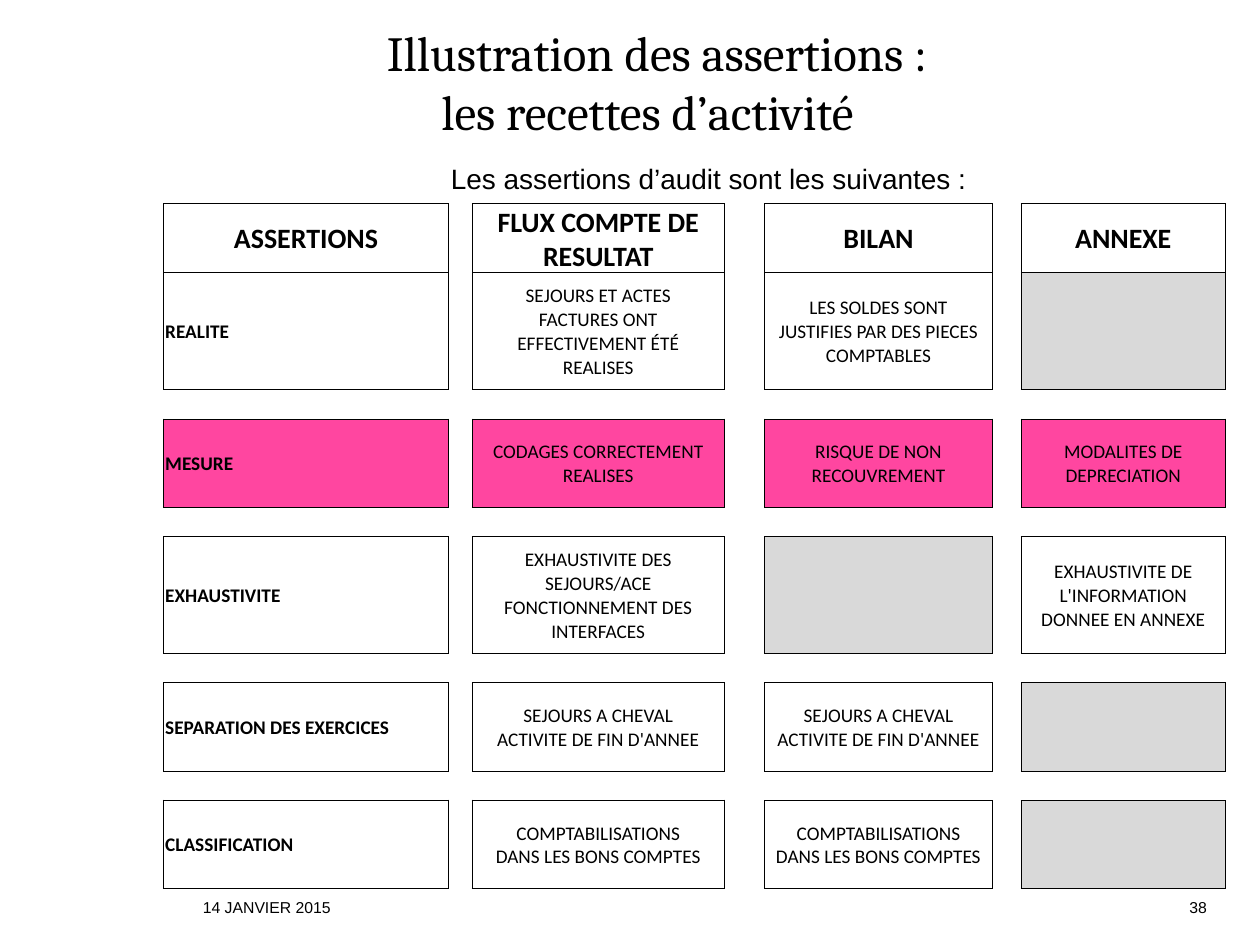
from pptx import Presentation
from pptx import util as u
from pptx.dml.color import RGBColor
from pptx.enum import text
from pptx.oxml import parse_xml
from pptx.oxml.ns import nsdecls

COLORS = {"ink": "000000", "paper": "FFFFFF", "empty": "D9D9D9", "focus": "FF46A0"}
ALIGN = text.PP_ALIGN
ANCHOR = text.MSO_ANCHOR


def format_paragraph(p, content, fmt, align=ALIGN.LEFT, indent=0):
    p.text = content
    p.alignment = align
    if indent:
        p._p.get_or_add_pPr().set("marL", str(u.Cm(indent)))
    p.font.color.rgb = RGBColor.from_string(COLORS["ink"])
    for key, value in fmt.items():
        setattr(p.font, key, value)


def line_weight(row, col):
    """Outline in points of a filled-in cell; 0 for spacers and outside the grid."""
    if row not in (0, 1, 3, 5, 7, 9) or col not in (0, 2, 4, 6):
        return 0
    return 1 if row == 9 and col < 4 else 0.5


prs = Presentation()
prs.slide_width, prs.slide_height = u.Cm(25.4), u.Cm(19.05)
s = prs.slides.add_slide(prs.slide_layouts[6])

# Title, introduction and footer: box, anchor, alignment, font, (line, indent) pairs
title_font = {"name": "Cambria", "size": u.Pt(28)}
intro_font = {"name": "Arial", "size": u.Pt(16)}
footer_font = {"name": "Arial", "size": u.Pt(9)}
boxes = [
    ((3, 0, 20.96, 2.82), ANCHOR.BOTTOM, ALIGN.LEFT, title_font,
     [("Illustration des assertions :", 4.8), ("les recettes d’activité", 5.9)]),
    ((4.09, 3.12, 19.84, 12.67), ANCHOR.TOP, ALIGN.LEFT, intro_font,
     [("Les assertions d’audit sont les suivantes :", 5)]),
    ((4.09, 17.96, 18, 0.51), ANCHOR.BOTTOM, ALIGN.LEFT, footer_font,
     [("14 JANVIER 2015", 0)]),
    ((22.3, 17.96, 2.03, 0.51), ANCHOR.BOTTOM, ALIGN.RIGHT, footer_font,
     [("38", 0)]),
]
for box, anchor, align, fmt, lines in boxes:
    tf = s.shapes.add_textbox(*map(u.Cm, box)).text_frame
    frame_format = {"word_wrap": True, "vertical_anchor": anchor, "margin_left": 0,
                    "margin_right": 0, "margin_top": 0, "margin_bottom": 0}
    for key, value in frame_format.items():
        setattr(tf, key, value)
    for i, (line, indent) in enumerate(lines):
        p = tf.add_paragraph() if i else tf.paragraphs[0]
        format_paragraph(p, line, fmt, align, indent)
        if fmt is intro_font:
            p.line_spacing = 1.2

# Assertions table: None marks a greyed cell
entries = [
    ["ASSERTIONS", "FLUX COMPTE DE\nRESULTAT", "BILAN", "ANNEXE"],
    ["REALITE", "SEJOURS ET ACTES\nFACTURES ONT\nEFFECTIVEMENT ÉTÉ\nREALISES",
     "LES SOLDES SONT\nJUSTIFIES PAR DES PIECES COMPTABLES", None],
    ["MESURE", "CODAGES CORRECTEMENT\nREALISES", "RISQUE DE NON\nRECOUVREMENT",
     "MODALITES DE DEPRECIATION"],
    ["EXHAUSTIVITE", "EXHAUSTIVITE DES\nSEJOURS/ACE\nFONCTIONNEMENT DES\nINTERFACES",
     None, "EXHAUSTIVITE DE\nL'INFORMATION\nDONNEE EN ANNEXE"],
    ["SEPARATION DES EXERCICES", "SEJOURS A CHEVAL\nACTIVITE DE FIN D'ANNEE",
     "SEJOURS A CHEVAL\nACTIVITE DE FIN D'ANNEE", None],
    ["CLASSIFICATION", "COMPTABILISATIONS\nDANS LES BONS COMPTES",
     "COMPTABILISATIONS\nDANS LES BONS COMPTES", None],
]
widths = [5.74, 0.48, 5.08, 0.81, 4.6, 0.58, 4.11]
heights = [1.2, 2.36, 0.59, 1.78, 0.59, 2.36, 0.59, 1.78, 0.59, 1.78]
frame = s.shapes.add_table(len(heights), len(widths), u.Cm(3.3), u.Cm(4.11),
                           u.Cm(sum(widths)), u.Cm(sum(heights)))
table = frame.table
table.first_row = table.horz_banding = False
for column, width in zip(table.columns, widths):
    column.width = u.Cm(width)
for row, height in zip(table.rows, heights):
    row.height = u.Cm(height)

cell_format = {"margin_left": u.Cm(0.03), "margin_right": u.Cm(0.03),
               "margin_top": u.Cm(0.03), "margin_bottom": 0,
               "vertical_anchor": ANCHOR.MIDDLE}
sides = {"lnL": (0, -1), "lnR": (0, 1), "lnT": (-1, 0), "lnB": (1, 0)}
for r in range(len(heights)):
    for c in range(len(widths)):
        cell = table.cell(r, c)
        for key, value in cell_format.items():
            setattr(cell, key, value)

        # Borders: an edge is drawn when either cell beside it is filled in
        tc_pr = cell._tc.get_or_add_tcPr()
        for tag, (dr, dc) in sides.items():
            weight = max(line_weight(r, c), line_weight(r + dr, c + dc))
            paint = (f'<a:solidFill><a:srgbClr val="{COLORS["ink"]}"/></a:solidFill>'
                     if weight else "<a:noFill/>")
            tc_pr.append(parse_xml(
                f'<a:{tag} {nsdecls("a")} w="{u.Pt(weight)}">{paint}</a:{tag}>'))

        # Spacer cells stay empty, with a small font so that rows keep their height
        p = cell.text_frame.paragraphs[0]
        if not line_weight(r, c):
            cell.fill.background()
            format_paragraph(p, "", {"size": u.Pt(8)})
            continue

        entry = entries[(r + 1) // 2][c // 2]
        fill = "empty" if entry is None else "focus" if r == 3 else "paper"
        cell.fill.solid()
        cell.fill.fore_color.rgb = RGBColor.from_string(COLORS[fill])
        fmt = {"name": "Calibri", "size": u.Pt(11 if r else 16), "bold": r == 0 or c == 0}
        format_paragraph(p, entry or "", fmt, ALIGN.LEFT if r and c == 0 else ALIGN.CENTER)

prs.save("out.pptx")
